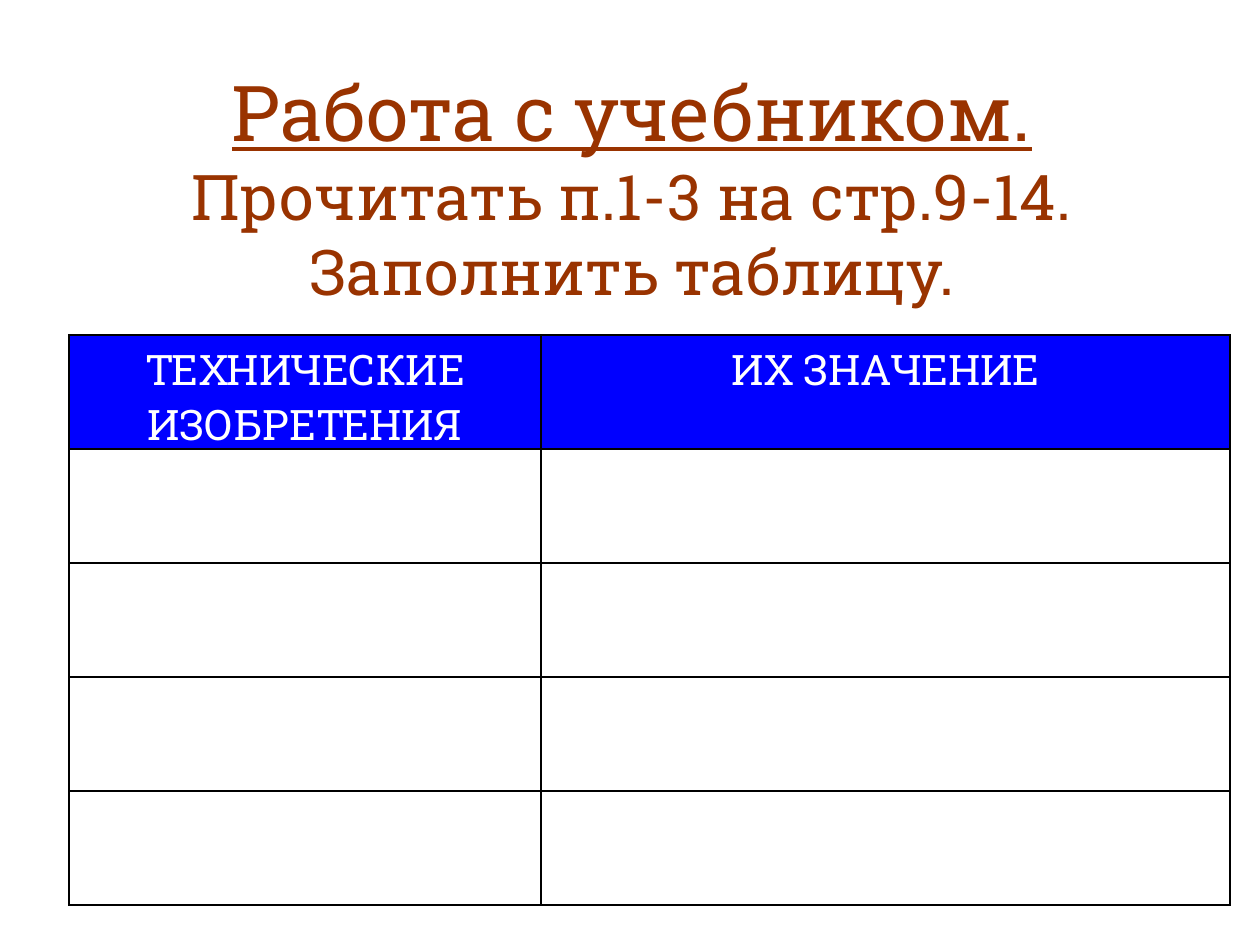
from lxml import etree
from pptx import Presentation
from pptx.dml.color import RGBColor
from pptx.enum.text import MSO_ANCHOR, PP_ALIGN
from pptx.oxml.ns import qn
from pptx.util import Pt

PX = 914400 // 126
CENTER = PP_ALIGN.CENTER
MIDDLE = MSO_ANCHOR.MIDDLE

BROWN = RGBColor(0x99, 0x33, 0x00)
BLUE = RGBColor(0x00, 0x00, 0xFF)
WHITE = RGBColor(0xFF, 0xFF, 0xFF)
BLACK = RGBColor(0x00, 0x00, 0x00)


def write_text(para, text, *, font, size, color, underline=False):
    """Add text to a paragraph; each newline becomes a line break."""
    for index, line in enumerate(text.split("\n")):
        if index:
            para.add_line_break()
        if line:
            span = para.add_run()
            span.text = line
            span.font.name = font
            span.font.size = Pt(size)
            span.font.bold = False
            span.font.underline = underline
            span.font.color.rgb = color
    para.alignment = CENTER


class SlideBuilder:
    font = "Roboto Slab"
    border_width = Pt(1)

    def __init__(self, slide):
        self.slide = slide

    def title(self, left, top, width, height, parts):
        box = self.slide.shapes.add_textbox(
            left * PX, top * PX, width * PX, height * PX)
        frame = box.text_frame
        frame.word_wrap = True
        frame.vertical_anchor = MIDDLE
        for text, size, underline in parts:
            write_text(frame.paragraphs[0], text, font=self.font, size=size,
                       color=BROWN, underline=underline)

    def border(self, cell):
        properties = cell._tc.get_or_add_tcPr()
        for side in ("a:lnL", "a:lnR", "a:lnT", "a:lnB"):
            line = etree.SubElement(properties, qn(side), w=str(self.border_width))
            fill = etree.SubElement(line, qn("a:solidFill"))
            etree.SubElement(fill, qn("a:srgbClr"), val=str(BLACK))

    def table(self, left, top, column_widths, row_height, row_count, headings):
        frame = self.slide.shapes.add_table(
            row_count, len(column_widths), left * PX, top * PX,
            sum(column_widths) * PX, row_count * row_height * PX)
        table = frame.table
        table.first_row = table.horz_banding = False
        for column, width in zip(table.columns, column_widths):
            column.width = width * PX
        for row in table.rows:
            row.height = row_height * PX
        for cell in table.iter_cells():
            self.border(cell)
            cell.fill.solid()
            cell.fill.fore_color.rgb = WHITE
        # Heading row
        for cell, heading in zip(table.rows[0].cells, headings):
            cell.fill.fore_color.rgb = BLUE
            write_text(cell.text_frame.paragraphs[0], heading,
                       font=self.font, size=24, color=WHITE)


def main():
    deck = Presentation()
    deck.slide_width, deck.slide_height = 1260 * PX, 945 * PX
    page = SlideBuilder(deck.slides.add_slide(deck.slide_layouts[6]))

    # Task
    page.title(63, 38, 1138, 297, [
        ("Работа с учебником.\n", 44, True),
        ("Прочитать п.1-3 на стр.9-14.\nЗаполнить таблицу.", 36, False),
    ])

    # Table to fill in
    page.table(69, 335, [472, 689], 114, 5,
               ["ТЕХНИЧЕСКИЕ ИЗОБРЕТЕНИЯ", "ИХ ЗНАЧЕНИЕ"])

    deck.save("out.pptx")


if __name__ == "__main__":
    main()
